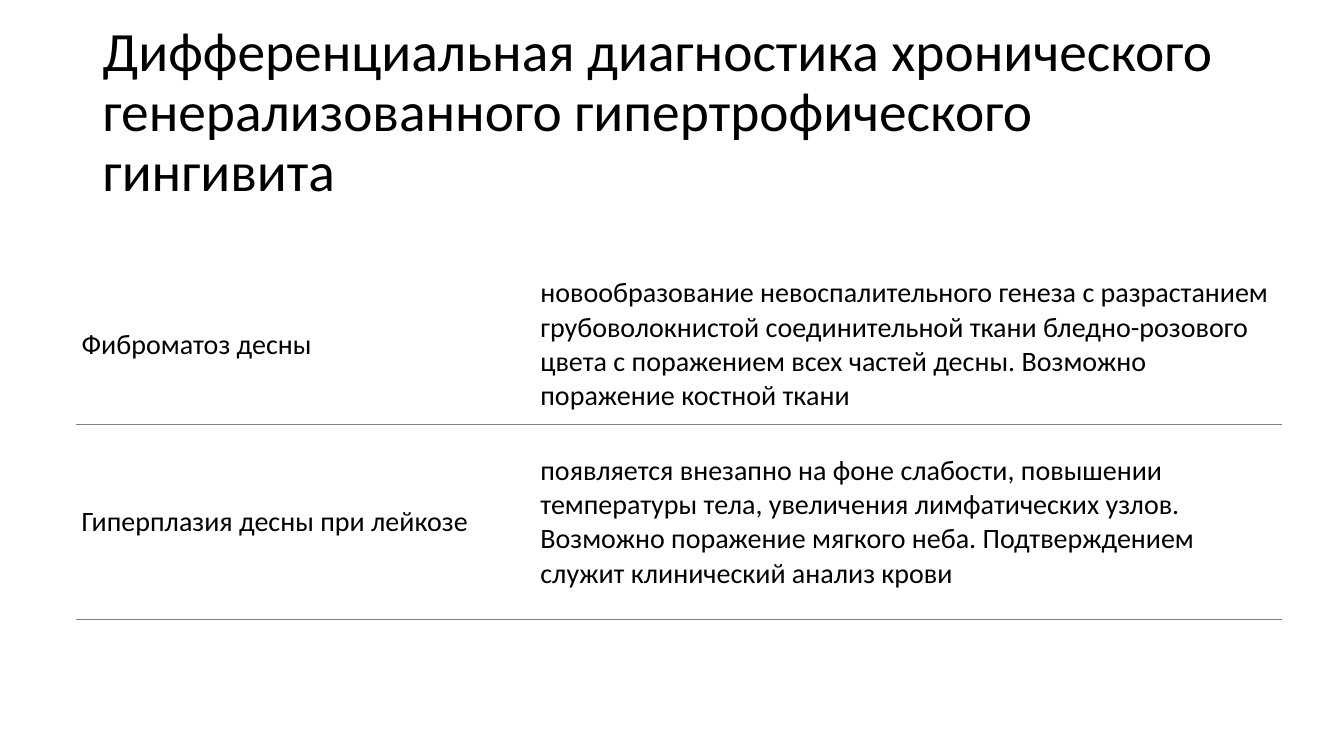
from lxml import etree
from pptx import Presentation
from pptx.dml.color import RGBColor
from pptx.enum.text import MSO_ANCHOR
from pptx.oxml.ns import qn
from pptx.util import Inches, Pt

BLACK = RGBColor(0x00, 0x00, 0x00)
WHITE = RGBColor(0xFF, 0xFF, 0xFF)
GRAY = RGBColor(0x80, 0x80, 0x80)
MIDDLE = MSO_ANCHOR.MIDDLE

TITLE = "Дифференциальная диагностика хронического генерализованного гипертрофического гингивита"
DIAGNOSES = [
    (
        "Фиброматоз десны",
        "новообразование невоспалительного генеза с разрастанием грубоволокнистой "
        "соединительной ткани бледно-розового цвета с поражением всех частей десны. "
        "Возможно поражение костной ткани",
    ),
    (
        "Гиперплазия десны при лейкозе",
        "появляется внезапно на фоне слабости, повышении температуры тела, "
        "увеличения лимфатических узлов.\n"
        "Возможно поражение мягкого неба. Подтверждением служит клинический анализ крови",
    ),
]
COLUMN_WIDTHS = [4.55, 7.4]
ROW_HEIGHTS = [1.58, 1.94]


def write_text(text_frame, text, size, line_spacing=None):
    text_frame.word_wrap = True
    paragraph = text_frame.paragraphs[0]
    paragraph.text = text
    paragraph.line_spacing = line_spacing
    for run in paragraph.runs:
        run.font.name = "Calibri"
        run.font.size = Pt(size)
        run.font.color.rgb = BLACK


def add_border(cell, side, position):
    line = etree.Element(qn(f"a:{side}"), w=str(Pt(0.75)))
    fill = etree.SubElement(line, qn("a:solidFill"))
    etree.SubElement(fill, qn("a:srgbClr"), val=str(GRAY))
    cell._tc.get_or_add_tcPr().insert(position, line)


presentation = Presentation()
presentation.slide_width = Inches(13.33)
presentation.slide_height = Inches(7.5)
slide = presentation.slides.add_slide(presentation.slide_layouts[6])

title = slide.shapes.add_textbox(Inches(0.92), Inches(0.4), Inches(11.5), Inches(1.45))
title.text_frame.vertical_anchor = MIDDLE
write_text(title.text_frame, TITLE, size=39.6, line_spacing=0.9)

table = slide.shapes.add_table(
    len(DIAGNOSES), len(COLUMN_WIDTHS),
    Inches(0.76), Inches(2.63), Inches(sum(COLUMN_WIDTHS)), Inches(sum(ROW_HEIGHTS)),
).table
table.first_row = False
table.horz_banding = False
for column, width in zip(table.columns, COLUMN_WIDTHS):
    column.width = Inches(width)

for row_index, (row, height, texts) in enumerate(zip(table.rows, ROW_HEIGHTS, DIAGNOSES)):
    row.height = Inches(height)
    for cell, text in zip(row.cells, texts):
        cell.vertical_anchor = MIDDLE
        cell.margin_left = cell.margin_right = Inches(0.05)
        cell.margin_top = cell.margin_bottom = Inches(0.05)
        cell.fill.solid()
        cell.fill.fore_color.rgb = WHITE
        write_text(cell.text_frame, text, size=20)
        add_border(cell, "lnB", 0)
        if row_index > 0:
            add_border(cell, "lnT", 0)

presentation.save("out.pptx")
